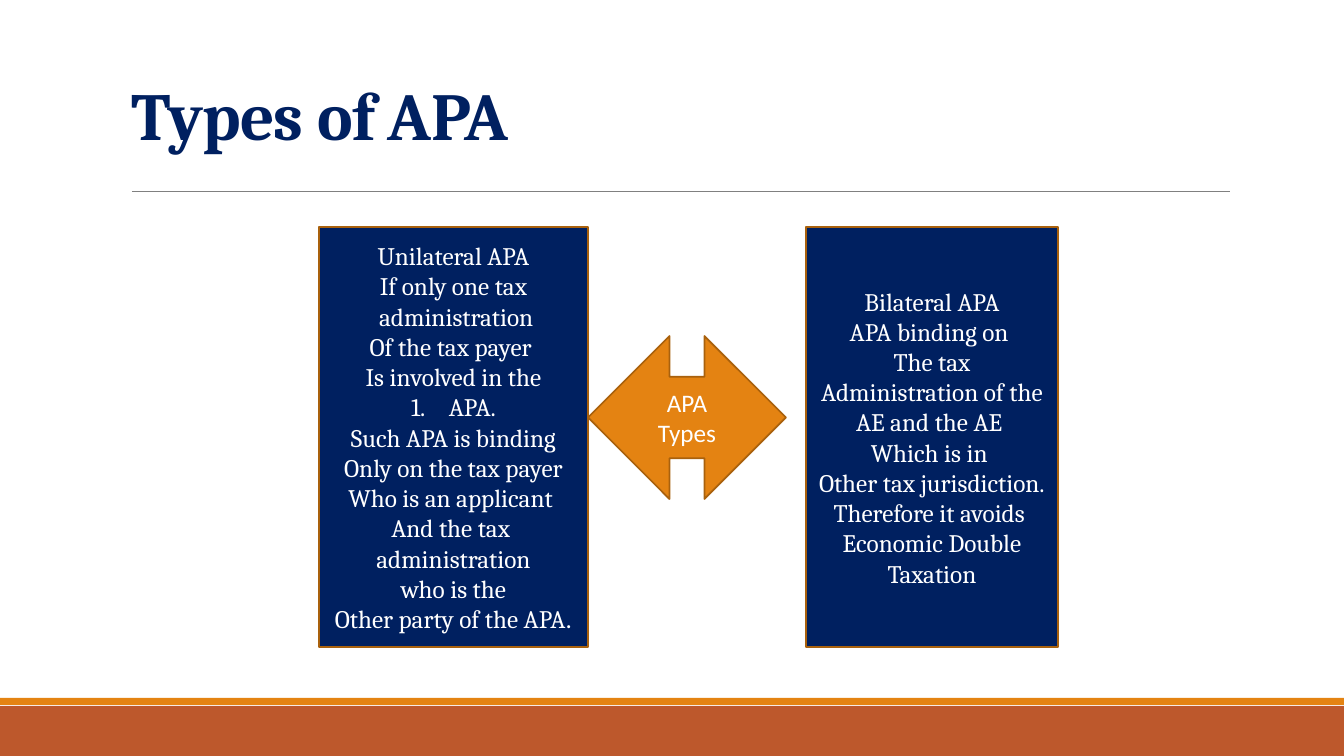
from dataclasses import dataclass

from lxml.etree import SubElement
from pptx import Presentation
from pptx.dml.color import RGBColor
from pptx.enum.shapes import MSO_CONNECTOR, MSO_SHAPE as Shape
from pptx.enum.text import MSO_ANCHOR as Anchor, MSO_AUTO_SIZE as AutoSize, PP_ALIGN as Align
from pptx.oxml.ns import qn
from pptx.util import Emu, Pt

PX = 914400 / 100.8

UNILATERAL = [
    "Unilateral APA", "If only one tax", " administration", "Of the tax payer ",
    "Is involved in the", "APA.", "Such APA is binding", "Only on the tax payer",
    "Who is an applicant ", "And the tax ", "administration", " who is the ",
    "Other party of the APA",
]
BILATERAL = [
    "Bilateral APA", "APA binding on ", "The tax", "Administration of the",
    "AE and the AE ", "Which is in ", "Other tax jurisdiction.",
    "Therefore it avoids ", "Economic Double", "Taxation",
]


@dataclass(frozen=True)
class Theme:
    navy: str = "002060"
    orange: str = "E48312"
    rust: str = "BD582C"
    outline: str = "A9610D"
    rule: str = "808080"
    white: str = "FFFFFF"
    serif: str = "Cambria"
    sans: str = "Calibri"
    title_size: int = 48
    body_size: int = 18


def px(*lengths):
    return [Emu(round(n * PX)) for n in lengths]


def add_run(p, text, *, font, size, color, bold=False, spacing=None):
    r = p.add_run()
    r.text = text
    r.font.name, r.font.size, r.font.bold = font, Pt(size), bold
    r.font.color.rgb = RGBColor.from_string(color)
    if spacing is not None:
        r._r.get_or_add_rPr().set("spc", str(spacing))
    return r


class SlideBuilder:
    """Draws styled elements on one slide."""

    def __init__(self, prs, theme):
        self.theme = theme
        self.s = prs.slides.add_slide(prs.slide_layouts[5])

    def title(self, text, *box):
        t = self.theme
        sp = self.s.shapes.title
        sp.left, sp.top, sp.width, sp.height = px(*box)
        tf = sp.text_frame
        tf.word_wrap, tf.auto_size = True, AutoSize.NONE
        tf.vertical_anchor = Anchor.BOTTOM
        p = tf.paragraphs[0]
        p.alignment, p.line_spacing = Align.LEFT, 0.85
        add_run(p, text, font=t.serif, size=t.title_size, color=t.navy, bold=True, spacing=-50)

    def rule(self, x1, y, x2):
        line = self.s.shapes.add_connector(MSO_CONNECTOR.STRAIGHT, *px(x1, y, x2, y))
        line.line.color.rgb = RGBColor.from_string(self.theme.rule)
        line.line.width = Pt(0.5)
        SubElement(line._element.spPr, qn("a:effectLst"))

    def shape(self, kind, *box, fill, outline=None):
        sp = self.s.shapes.add_shape(kind, *px(*box))
        sp.shadow.inherit = False
        sp.fill.solid()
        sp.fill.fore_color.rgb = RGBColor.from_string(fill)
        if outline:
            sp.line.color.rgb = RGBColor.from_string(outline)
            sp.line.width = Pt(1.25)
        else:
            sp.line.fill.background()
        return sp

    def text_shape(self, kind, lines, *box, fill, font):
        t = self.theme
        tf = self.shape(kind, *box, fill=fill, outline=t.outline).text_frame
        tf.word_wrap, tf.vertical_anchor = True, Anchor.MIDDLE
        for i, text in enumerate(lines):
            p = tf.add_paragraph() if i else tf.paragraphs[0]
            p.alignment = Align.CENTER
            add_run(p, text, font=font, size=t.body_size, color=t.white)
        return tf

    def number(self, p):
        pPr = p._p.get_or_add_pPr()
        pPr.set("marL", "342900")
        pPr.set("indent", "-342900")
        SubElement(pPr, qn("a:buAutoNum"), type="arabicPeriod")


def main():
    prs = Presentation()
    prs.slide_width, prs.slide_height = px(1344, 756)
    t = Theme()
    b = SlideBuilder(prs, t)

    b.shape(Shape.RECTANGLE, 0, 706, 1344, 50, fill=t.rust)
    b.shape(Shape.RECTANGLE, 0, 698, 1344, 7, fill=t.orange)
    b.rule(132, 191, 1230)
    b.title("Types of APA", 121, 31, 1109, 128)

    tf = b.text_shape(Shape.RECTANGLE, UNILATERAL, 319, 227, 269, 420, fill=t.navy, font=t.serif)
    b.number(tf.paragraphs[UNILATERAL.index("APA.")])
    add_run(tf.paragraphs[-1], ".", font=t.sans, size=t.body_size, color=t.white)
    b.text_shape(Shape.RECTANGLE, BILATERAL, 806, 227, 252, 420, fill=t.navy, font=t.serif)
    b.text_shape(Shape.LEFT_RIGHT_ARROW, ["APA Types"], 588, 336, 198, 163,
                 fill=t.orange, font=t.sans)

    prs.save("out.pptx")


if __name__ == "__main__":
    main()
